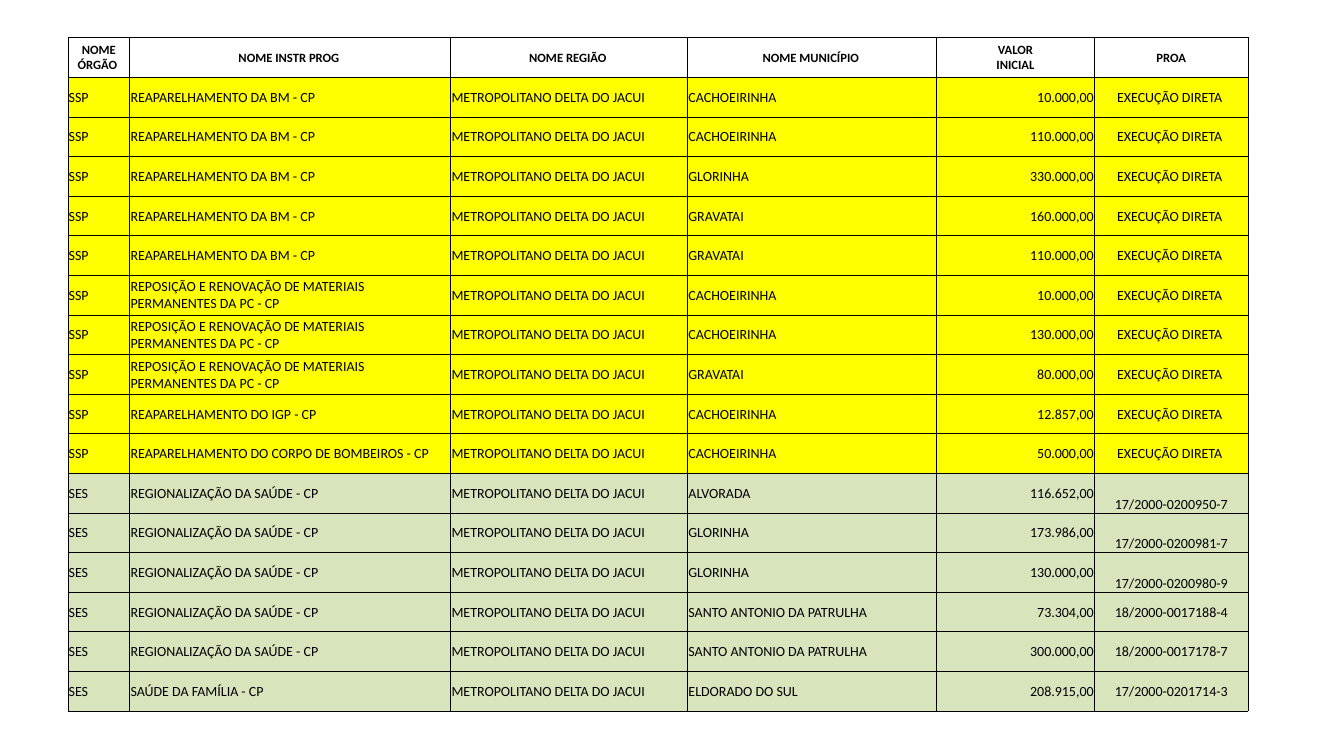
from copy import deepcopy
from dataclasses import dataclass

from lxml.etree import SubElement
from pptx import Presentation
from pptx.dml.color import RGBColor as RGB
from pptx.enum.text import MSO_ANCHOR as ANCHOR, PP_ALIGN as ALIGN
from pptx.oxml.ns import qn
from pptx.util import Cm, Pt


@dataclass(frozen=True)
class Theme:
    font: str = "Calibri"
    header_size: int = 9
    body_size: int = 10
    ink: str = "000000"
    security: str = "FFFF00"
    health: str = "D7E4BC"
    border_pt: float = 0.5


# Table content
BM = "REAPARELHAMENTO DA BM - CP"
PC = "REPOSIÇÃO E RENOVAÇÃO DE MATERIAIS PERMANENTES DA PC - CP"
IGP = "REAPARELHAMENTO DO IGP - CP"
FIRE = "REAPARELHAMENTO DO CORPO DE BOMBEIROS - CP"
REGIONAL = "REGIONALIZAÇÃO DA SAÚDE - CP"
FAMILY = "SAÚDE DA FAMÍLIA - CP"
REGION = "METROPOLITANO DELTA DO JACUI"
DIRECT = "EXECUÇÃO DIRETA "

HEADER = ["NOME ÓRGÃO ", "NOME INSTR PROG ", "NOME REGIÃO ",
          "NOME MUNICÍPIO ", "VALOR\vINICIAL", "PROA"]
SECURITY = [
    (BM, "CACHOEIRINHA", "10.000,00"),
    (BM, "CACHOEIRINHA", "110.000,00"),
    (BM, "GLORINHA", "330.000,00"),
    (BM, "GRAVATAI", "160.000,00"),
    (BM, "GRAVATAI", "110.000,00"),
    (PC, "CACHOEIRINHA", "10.000,00"),
    (PC, "CACHOEIRINHA", "130.000,00"),
    (PC, "GRAVATAI", "80.000,00"),
    (IGP, "CACHOEIRINHA", "12.857,00"),
    (FIRE, "CACHOEIRINHA", "50.000,00"),
]
HEALTH = [
    (REGIONAL, "ALVORADA", "116.652,00", "17/2000-0200950-7", ANCHOR.BOTTOM),
    (REGIONAL, "GLORINHA", "173.986,00", "17/2000-0200981-7", ANCHOR.BOTTOM),
    (REGIONAL, "GLORINHA", "130.000,00", "17/2000-0200980-9", ANCHOR.BOTTOM),
    (REGIONAL, "SANTO ANTONIO DA PATRULHA", "73.304,00", "18/2000-0017188-4", ANCHOR.MIDDLE),
    (REGIONAL, "SANTO ANTONIO DA PATRULHA", "300.000,00", "18/2000-0017178-7", ANCHOR.MIDDLE),
    (FAMILY, "ELDORADO DO SUL", "208.915,00", "17/2000-0201714-3", ANCHOR.MIDDLE),
]
WIDTHS = [1.56, 8.09, 5.97, 6.27, 3.98, 3.87]
ALIGNS = [ALIGN.LEFT] * 4 + [ALIGN.RIGHT, ALIGN.CENTER]


class Deck:
    def __init__(self, theme):
        self.theme = theme
        self.prs = Presentation()
        self.prs.slide_width, self.prs.slide_height = Cm(33.87), Cm(19.05)
        self.s = self.prs.slides.add_slide(self.prs.slide_layouts[6])

    def table(self, left, top, height, widths, n_rows):
        frame = self.s.shapes.add_table(n_rows, len(widths), Cm(left), Cm(top),
                                        Cm(sum(widths)), Cm(height))
        tbl = frame.table
        tbl.first_row = tbl.horz_banding = False
        for col, width in zip(tbl.columns, widths):
            col.width = Cm(width)
        return tbl

    def borders(self, cell):
        tc_pr = cell._tc.get_or_add_tcPr()
        for side in ("lnL", "lnR", "lnT", "lnB"):
            ln = SubElement(tc_pr, qn(f"a:{side}"), w=str(Pt(self.theme.border_pt)))
            fill = SubElement(ln, qn("a:solidFill"))
            SubElement(fill, qn("a:srgbClr"), val=self.theme.ink)

    def cell(self, cell, text, align, anchor=ANCHOR.MIDDLE, fill=None, bold=False):
        th = self.theme
        layout = {"margin_left": Cm(0.02), "margin_right": Cm(0.02),
                  "margin_top": Cm(0.02), "margin_bottom": 0,
                  "vertical_anchor": anchor}
        for name, value in layout.items():
            setattr(cell, name, value)
        self.borders(cell)
        if fill:
            cell.fill.solid()
            cell.fill.fore_color.rgb = RGB.from_string(fill)
        else:
            cell.fill.background()
        p = cell.text_frame.paragraphs[0]
        p.text, p.alignment = text, align
        style = {"name": th.font, "bold": bold,
                 "size": Pt(th.header_size if bold else th.body_size)}
        for r in p.runs:
            for name, value in style.items():
                setattr(r.font, name, value)
            r.font.color.rgb = RGB.from_string(th.ink)
        # Line breaks take the size of the text around them
        for br in p._p.findall(qn("a:br")):
            br.append(deepcopy(p.runs[0]._r.rPr))


def main():
    theme = Theme()
    deck = Deck(theme)
    rows = [("SSP", prog, REGION, town, value, DIRECT, ANCHOR.MIDDLE, theme.security)
            for prog, town, value in SECURITY]
    rows += [("SES", prog, REGION, town, value, proa, anchor, theme.health)
             for prog, town, value, proa, anchor in HEALTH]
    tbl = deck.table(1.71, 0.95, 16.97, WIDTHS, len(rows) + 1)

    # Header row
    for c, title in enumerate(HEADER):
        deck.cell(tbl.cell(0, c), title, ALIGN.CENTER, bold=True)

    # Body rows: only the last column varies its anchor
    for i, (*texts, proa_anchor, fill) in enumerate(rows, 1):
        anchors = [ANCHOR.MIDDLE] * 5 + [proa_anchor]
        for c, (text, align, anchor) in enumerate(zip(texts, ALIGNS, anchors)):
            deck.cell(tbl.cell(i, c), text, align, anchor, fill)

    deck.prs.save("out.pptx")


if __name__ == "__main__":
    main()
